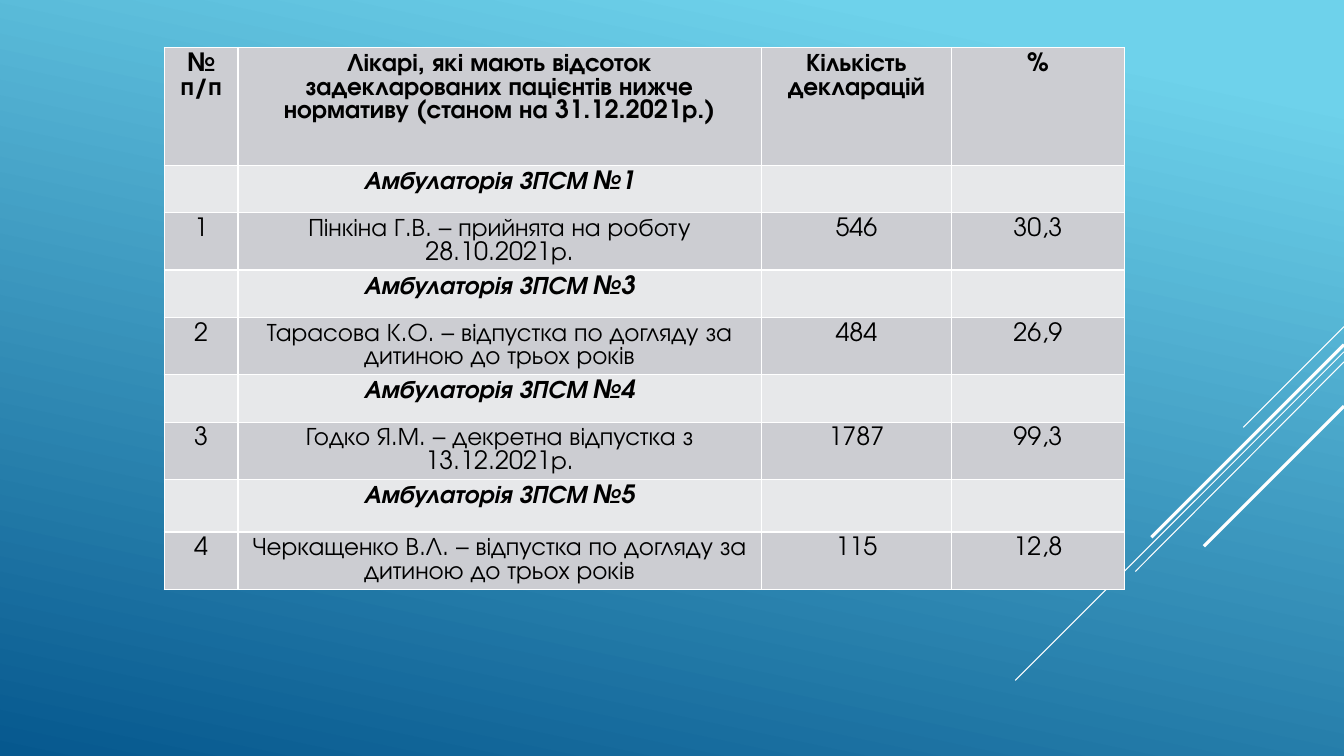
"""Builds the slide listing doctors whose share of declared patients is below the norm."""
import pptx
import pptx.dml.color
import pptx.enum.shapes
import pptx.enum.text
import pptx.oxml
import pptx.oxml.ns
import pptx.util
from pptx.util import Inches


def color(value):
    return pptx.dml.color.RGBColor.from_string(value)


def write(cell, text, bold=False, italic=False, size=18):
    para = cell.text_frame.paragraphs[0]
    para.alignment = pptx.enum.text.PP_ALIGN.CENTER
    para.line_spacing = pptx.util.Pt(16.9)
    span = para.add_run()
    span.text = text
    span.font.name = "TeX Gyre Adventor"
    span.font.size = pptx.util.Pt(size)
    span.font.bold = bold
    span.font.italic = italic
    span.font.color.rgb = color("000000")


deck = pptx.Presentation()
deck.slide_width = Inches(13.33)
deck.slide_height = Inches(7.5)
page = deck.slides.add_slide(deck.slide_layouts[6])

backdrop = page.background.fill
backdrop.gradient()
backdrop.gradient_angle = 258
for stop, position, shade in zip(backdrop.gradient_stops, (0.1, 1), ("6ED2EB", "06588E")):
    stop.position = position
    stop.color.rgb = color(shade)

diagonals = [
    (3.24, 12.33, 4.24, 0.75),
    (3.49, 10.07, 6.75, 0.75),
    (3.59, 11.26, 5.67, 0.75),
    (3.42, 11.42, 5.33, 2.25),
    (4.03, 11.94, 5.42, 2.25),
]
for start_y, end_x, end_y, width in diagonals:
    line = page.shapes.add_connector(
        pptx.enum.shapes.MSO_CONNECTOR.STRAIGHT,
        Inches(13.33), Inches(start_y), Inches(end_x), Inches(end_y))
    line.line.color.rgb = color("FFFFFF")
    line.line.width = pptx.util.Pt(width)
    line._element.spPr.append(pptx.oxml.parse_xml(
        f'<a:effectLst {pptx.oxml.ns.nsdecls("a")}/>'))

rows = [
    ("№ п/п", "Лікарі, які мають відсоток задекларованих пацієнтів нижче нормативу "
     "(станом на 31.12.2021р.)", "Кількість декларацій", "%"),
    ("", "Амбулаторія ЗПСМ №1", "", ""),
    ("1", "Пінкіна Г.В. – прийнята на роботу 28.10.2021р.", "546", "30,3"),
    ("", "Амбулаторія ЗПСМ №3", "", ""),
    ("2", "Тарасова К.О. – відпустка по догляду за дитиною до трьох років", "484", "26,9"),
    ("", "Амбулаторія ЗПСМ №4", "", ""),
    ("3", "Годко Я.М. – декретна відпустка з 13.12.2021р.", "1787", "99,3"),
    ("", "Амбулаторія ЗПСМ №5", "", ""),
    ("4", "Черкащенко В.Л. – відпустка по догляду за дитиною до трьох років", "115", "12,8"),
]
column_widths = [0.73, 5.19, 1.89, 1.71]
row_heights = [1.17, 0.47, 0.57, 0.47, 0.57, 0.47, 0.57, 0.52, 0.57]

table = page.shapes.add_table(
    len(rows), len(column_widths), Inches(1.63), Inches(0.47),
    Inches(sum(column_widths)), Inches(sum(row_heights))).table
for column, width in zip(table.columns, column_widths):
    column.width = Inches(width)

for row_number, (texts, height) in enumerate(zip(rows, row_heights)):
    table.rows[row_number].height = Inches(height)
    is_header = row_number == 0
    is_clinic = row_number % 2 == 1
    for column_number, text in enumerate(texts):
        cell = table.cell(row_number, column_number)
        cell.fill.solid()
        cell.fill.fore_color.rgb = color("E7E8EA" if is_clinic else "CCCDD2")
        for place, side in enumerate(("lnL", "lnR", "lnT", "lnB")):
            cell._tc.tcPr.insert(place, pptx.oxml.parse_xml(
                f'<a:{side} {pptx.oxml.ns.nsdecls("a")} w="12700"><a:solidFill>'
                f'<a:srgbClr val="FFFFFF"/></a:solidFill></a:{side}>'))
        if text:
            write(cell, text, bold=is_header or is_clinic, italic=is_clinic)

deck.save("out.pptx")
